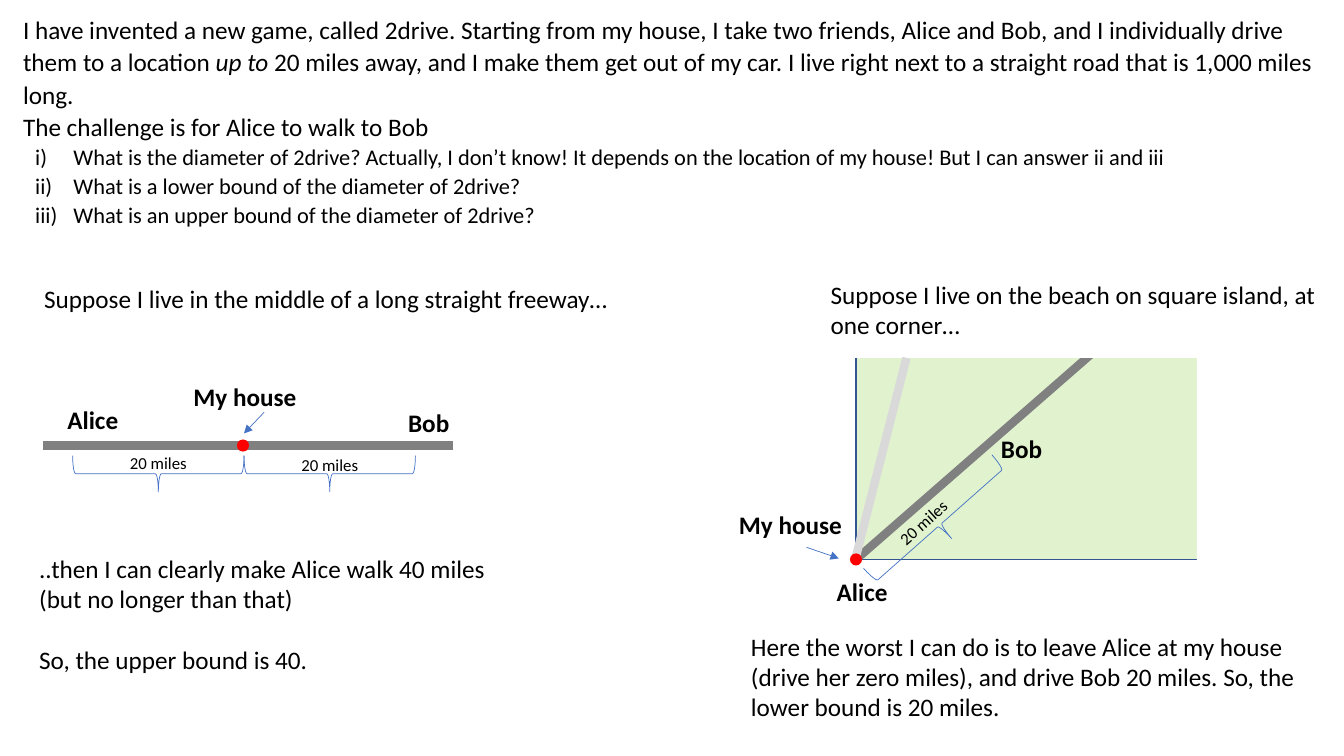
"""Build the 2drive slide about lower and upper bounds."""
from dataclasses import dataclass

import pptx
import pptx.dml.color
import pptx.enum.shapes
import pptx.enum.text
import pptx.oxml.ns
import pptx.util
from lxml import etree

Inches = pptx.util.Inches
Pt = pptx.util.Pt
Shape = pptx.enum.shapes.MSO_SHAPE
BLUE, ROAD, FADED_ROAD = "4472C4", "808080", "D9D9D9"
BLACK, WHITE, RED = "000000", "FFFFFF", "FF0000"


@dataclass
class Figure:
    left: float
    top: float
    width: float
    height: float
    kind: Shape = Shape.RECTANGLE
    fill: str = ""
    line: str = ""
    weight: float = 0.5
    rotation: float = 0


@dataclass
class Stroke:
    start: tuple[float, float]
    end: tuple[float, float]
    color: str = ROAD
    weight: float = 6
    arrow: bool = False


@dataclass
class Label:
    left: float
    top: float
    width: float
    height: float
    texts: tuple[str, ...]
    size: int = 18
    bold: bool = False
    rotation: float = 0


def brace(left: float, top: float, rotation: float) -> Figure:
    """Describe a brace spanning 20 miles."""
    return Figure(left, top, 0.36, 1.7, Shape.RIGHT_BRACE, line=BLUE, rotation=rotation)


def house(left: float, top: float) -> Figure:
    """Describe the red dot of a house."""
    return Figure(left, top, 0.12, 0.12, Shape.OVAL, fill=RED)


def name(left: float, top: float, width: float, text: str) -> Label:
    """Describe a bold name."""
    return Label(left, top, width, 0.4, (text,), bold=True)


def distance(left: float, top: float, rotation: float = 0) -> Label:
    """Describe a distance caption."""
    return Label(left, top, 1.12, 0.3, ("20 miles",), size=12, rotation=rotation)


PARTS = [
    Figure(8.49, 2.71, 4.25, 2.84, fill="E1F2CE", line="325491", weight=1),
    Stroke((0.43, 4.42), (4.49, 4.42)),
    Stroke((8.49, 5.55), (11.25, 3.14)),
    Figure(8.26, 2.63, 4.72, 0.92, fill=WHITE),
    Figure(11.87, 3.03, 1.03, 2.71, fill=WHITE),
    Stroke((8.48, 5.56), (8.99, 3.55), FADED_ROAD),
    brace(1.39, 3.85, 90),
    brace(3.09, 3.85, 90),
    brace(9.14, 4.36, 48.5),
    Stroke((2.62, 4.09), (2.42, 4.3), BLUE, 0.5, True),
    Stroke((8, 5.43), (8.32, 5.54), BLUE, 0.5, True),
    house(2.35, 4.36),
    house(8.43, 5.49),
    name(0.57, 3.96, 0.96, "Alice"),
    name(3.95, 3.99, 0.74, "Bob"),
    name(1.82, 3.73, 1.58, "My house"),
    name(8.2, 5.67, 0.96, "Alice"),
    name(9.83, 4.25, 0.74, "Bob"),
    name(7.23, 5, 1.58, "My house"),
    distance(1.19, 4.44),
    distance(2.89, 4.46),
    distance(8.73, 4.91, 318.1),
    Label(0.34, 2.76, 6.16, 0.4, ("Suppose I live in the middle of a long straight freeway…",)),
    Label(0.29, 5.44, 4.64, 1.31, (
        "..then I can clearly make Alice walk 40 miles (but no longer than that)",
        "So, the upper bound is 40.")),
    Label(8.14, 2.72, 5.38, 0.71, (
        "Suppose I live on the beach on square island, at one corner…",)),
    Label(7.35, 6.21, 5.92, 1.01, (
        "Here the worst I can do is to leave Alice at my house (drive her zero miles), "
        "and drive Bob 20 miles. So, the lower bound is 20 miles.",)),
]
INTRO = (
    ("I have invented a new game, called 2drive. Starting from my house, I take two friends, "
     "Alice and Bob, and I individually drive them to a location ", False),
    ("up to ", True),
    ("20 miles away, and I make them get out of my car. I live right next to a straight road "
     "that is 1,000 miles long.", False),
)
CHALLENGE = "The challenge is for Alice to walk to Bob"
QUESTIONS = (
    "What is the diameter of 2drive? Actually, I don’t know! It depends on the location of "
    "my house! But I can answer ii and iii",
    "What is a lower bound of the diameter of 2drive?",
    "What is an upper bound of the diameter of 2drive?",
)


def rgb(color: str) -> pptx.dml.color.RGBColor:
    """Turn a hex string into a colour."""
    return pptx.dml.color.RGBColor.from_string(color)


def add_figure(page, figure: Figure) -> None:
    """Draw a preset shape."""
    shape = page.shapes.add_shape(figure.kind, Inches(figure.left), Inches(figure.top),
                                  Inches(figure.width), Inches(figure.height))
    shape.shadow.inherit = False
    shape.rotation = figure.rotation
    for paint, color in ((shape.fill, figure.fill), (shape.line.fill, figure.line)):
        if color:
            paint.solid()
            paint.fore_color.rgb = rgb(color)
        else:
            paint.background()
    if figure.line:
        shape.line.width = Pt(figure.weight)


def add_stroke(page, stroke: Stroke) -> None:
    """Draw a road or an arrow."""
    connector = page.shapes.add_connector(
        pptx.enum.shapes.MSO_CONNECTOR.STRAIGHT,
        *(Inches(value) for value in stroke.start + stroke.end))
    connector.line.color.rgb = rgb(stroke.color)
    connector.line.width = Pt(stroke.weight)
    qn = pptx.oxml.ns.qn
    if stroke.arrow:
        etree.SubElement(connector.line._get_or_add_ln(), qn("a:tailEnd"), type="triangle")
    etree.SubElement(connector._element.spPr, qn("a:effectLst"))


def set_font(para, size: int, bold: bool = False) -> None:
    """Set the common font of a paragraph."""
    para.font.name = "Calibri"
    para.font.size = Pt(size)
    para.font.bold = bold
    para.font.color.rgb = rgb(BLACK)


def add_label(page, label: Label):
    """Draw a text box and return its text frame."""
    box = page.shapes.add_textbox(Inches(label.left), Inches(label.top),
                                  Inches(label.width), Inches(label.height))
    box.rotation = label.rotation
    frame = box.text_frame
    frame.word_wrap = True
    frame.auto_size = pptx.enum.text.MSO_AUTO_SIZE.SHAPE_TO_FIT_TEXT
    for index, text in enumerate(label.texts):
        para = frame.add_paragraph() if index else frame.paragraphs[0]
        para.text = text
        para.space_before = Pt(22 if index else 0)
        set_font(para, label.size, label.bold)
    return frame


def add_problem(page) -> None:
    """Write the game's rules and its numbered questions."""
    frame = add_label(page, Label(0.13, 0.07, 12.99, 2.25, ("", CHALLENGE) + QUESTIONS))
    for text, italic in INTRO:
        span = frame.paragraphs[0].add_run()
        span.text = text
        span.font.italic = italic
    for para in frame.paragraphs:
        para.line_spacing = 1.07
        para.space_before = Pt(0)
    for para in frame.paragraphs[2:]:
        set_font(para, 16)
        properties = para._p.get_or_add_pPr()
        properties.set("marL", str(Inches(0.5)))
        properties.set("indent", str(Inches(-0.38)))
        numbering = etree.Element(pptx.oxml.ns.qn("a:buAutoNum"), type="romanLcParenR")
        properties.find(pptx.oxml.ns.qn("a:defRPr")).addprevious(numbering)


def main() -> None:
    """Build and save the deck."""
    deck = pptx.Presentation()
    deck.slide_width, deck.slide_height = Inches(13.33), Inches(7.5)
    page = deck.slides.add_slide(deck.slide_layouts[6])
    add_problem(page)
    draw = {Figure: add_figure, Stroke: add_stroke, Label: add_label}
    for part in PARTS:
        draw[type(part)](page, part)
    deck.save("out.pptx")


if __name__ == "__main__":
    main()
